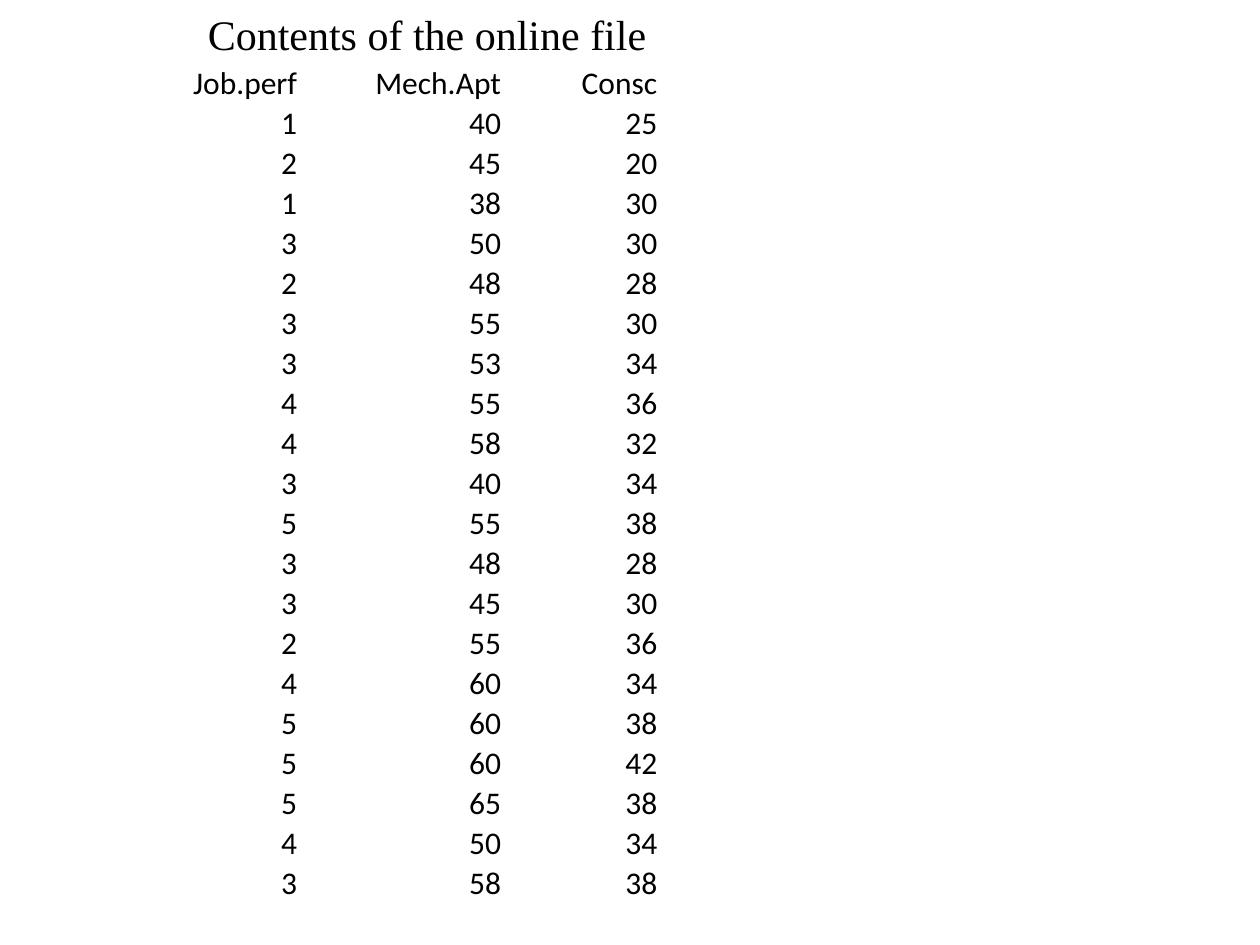
from dataclasses import dataclass

from pptx import Presentation
from pptx.dml.color import RGBColor
from pptx.enum.text import MSO_ANCHOR, MSO_AUTO_SIZE, PP_ALIGN
from pptx.util import Cm, Pt

RIGHT = PP_ALIGN.RIGHT
LEFT = PP_ALIGN.LEFT
BOTTOM = MSO_ANCHOR.BOTTOM
GROW = MSO_AUTO_SIZE.SHAPE_TO_FIT_TEXT
BLANK_LAYOUT = 6

HEADINGS = ["Job.perf", "Mech.Apt", "Consc"]
SCORES = [
    (1, 40, 25), (2, 45, 20), (1, 38, 30), (3, 50, 30), (2, 48, 28),
    (3, 55, 30), (3, 53, 34), (4, 55, 36), (4, 58, 32), (3, 40, 34),
    (5, 55, 38), (3, 48, 28), (3, 45, 30), (2, 55, 36), (4, 60, 34),
    (5, 60, 38), (5, 60, 42), (5, 65, 38), (4, 50, 34), (3, 58, 38),
]


@dataclass(frozen=True)
class Theme:
    ink: RGBColor = RGBColor(0, 0, 0)
    title_font: str = "Times New Roman"
    title_size: int = 24
    table_font: str = "Calibri"
    table_size: int = 18


def apply_format(target, values):
    for name, value in values.items():
        setattr(target, name, value)


class PageBuilder:
    def __init__(self, page, theme):
        self.page = page
        self.theme = theme

    def add_text(self, frame, text, font, size, alignment):
        para = frame.paragraphs[0]
        para.alignment = alignment
        span = para.add_run()
        span.text = text
        apply_format(span.font, {"name": font, "size": Pt(size)})
        span.font.color.rgb = self.theme.ink

    def title(self, text, left, top, width, height):
        box = self.page.shapes.add_textbox(Cm(left), Cm(top), Cm(width), Cm(height))
        apply_format(box.text_frame, {"word_wrap": False, "auto_size": GROW})
        self.add_text(box.text_frame, text, self.theme.title_font,
                      self.theme.title_size, LEFT)

    def table(self, rows, left, top, widths, row_height):
        table = self.page.shapes.add_table(
            len(rows), len(widths), Cm(left), Cm(top),
            Cm(sum(widths)), Cm(row_height * len(rows)),
        ).table
        apply_format(table, {"first_row": False, "horz_banding": False})
        for column, width in zip(table.columns, widths):
            column.width = Cm(width)
        cell_format = {
            "margin_left": Cm(0.03), "margin_right": Cm(0.03),
            "margin_top": Cm(0.03), "margin_bottom": Cm(0),
            "vertical_anchor": BOTTOM,
        }
        for table_row, values in zip(table.rows, rows):
            table_row.height = Cm(row_height)
            for cell, value in zip(table_row.cells, values):
                apply_format(cell, cell_format)
                cell.fill.background()
                self.add_text(cell.text_frame, str(value), self.theme.table_font,
                              self.theme.table_size, RIGHT)


def main():
    deck = Presentation()
    apply_format(deck, {"slide_width": Cm(25.4), "slide_height": Cm(19.05)})
    page = deck.slides.add_slide(deck.slide_layouts[BLANK_LAYOUT])
    builder = PageBuilder(page, Theme())
    builder.table([HEADINGS, *SCORES], 3.81, 1.27, [2.21, 4.11, 3.15], 0.78)
    builder.title("Contents of the online file", 3.94, 0.05, 9.42, 1.3)
    deck.save("out.pptx")


if __name__ == "__main__":
    main()
